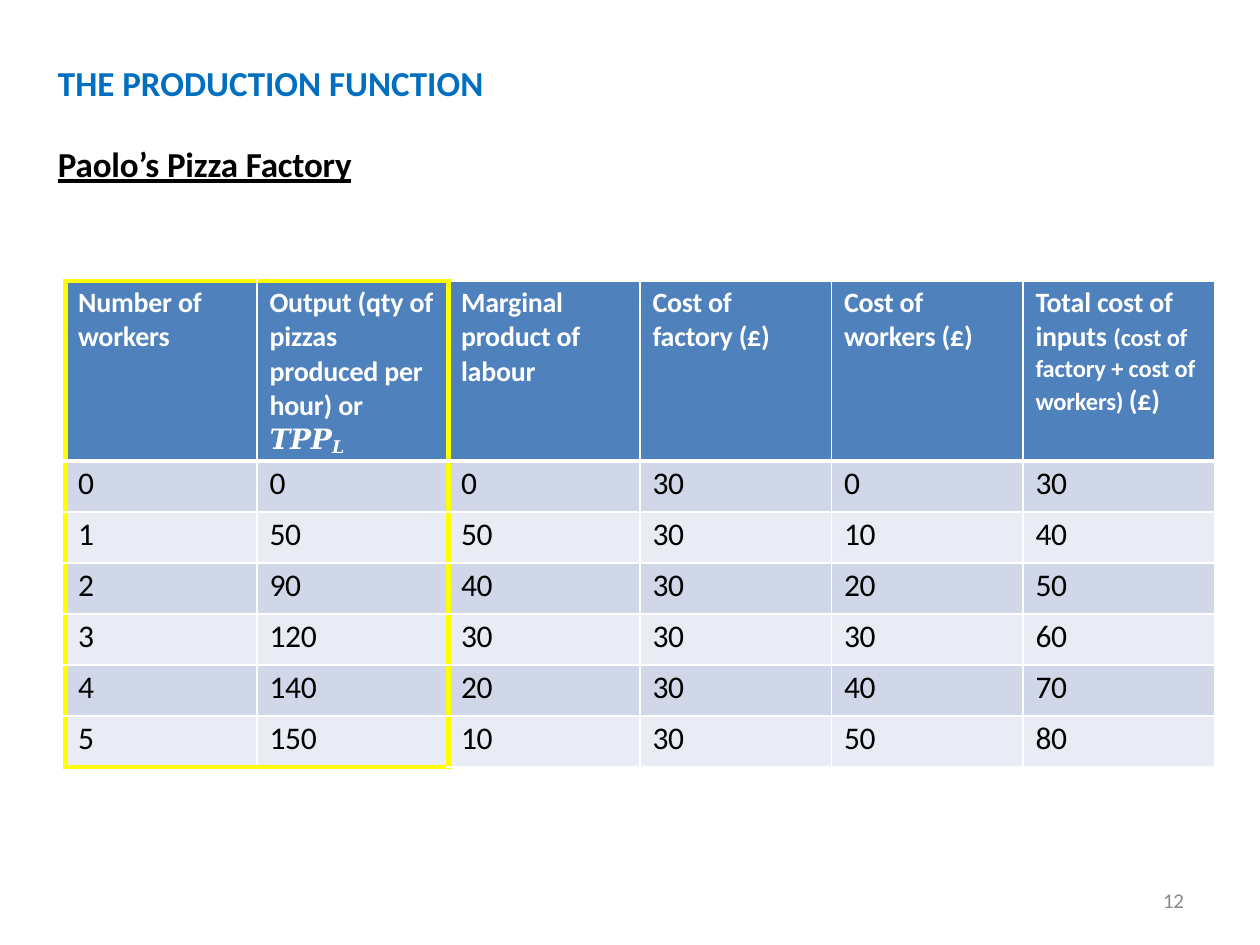
from lxml.etree import SubElement
from pptx import Presentation
from pptx.dml.color import RGBColor
from pptx.enum.text import MSO_ANCHOR, MSO_AUTO_SIZE, PP_ALIGN
from pptx.oxml.ns import qn
from pptx.util import Inches, Pt

WHITE, BLACK, YELLOW = "FFFFFF", "000000", "FFFF00"
BLUE, GREY = "006FC0", "888888"
HEADER_FILL, BAND_FILLS = "4F81BC", ("D0D7E8", "E9ECF4")
FRAMED_COLUMNS = 2

# Each heading is a list of paragraphs, each paragraph a list of (text, format)
SMALL = {"size": 14}
MATHS = {"font": "Times New Roman", "bold": False}
HEADINGS = [
    [[("Number of", {})], [("workers", {})]],
    [[("Output (qty of pizzas produced per hour) or", {})],
     [("𝑻𝑷𝑷", MATHS), ("𝑳", {**MATHS, "size": 17.2, "baseline": -14})]],
    [[("Marginal product of labour", {})]],
    [[("Cost of", {})], [("factory (£)", {})]],
    [[("Cost of", {})], [("workers (£)", {})]],
    [[("Total cost of inputs ", {}),
      ("(cost of factory + cost of workers) ", SMALL), ("(£)", {})]],
]
ROWS = [
    (0, 0, 0, 30, 0, 30),
    (1, 50, 50, 30, 10, 40),
    (2, 90, 40, 30, 20, 50),
    (3, 120, 30, 30, 30, 60),
    (4, 140, 20, 30, 40, 70),
    (5, 150, 10, 30, 50, 80),
]


def colour(code):
    return RGBColor.from_string(code)


def write(para, text, size=16, color=BLACK, font="Calibri", bold=False,
          underline=False, spacing=-0.1, baseline=0):
    span = para.add_run()
    span.text = text
    span.font.size = Pt(size)
    span.font.name = font
    span.font.bold = bold
    span.font.underline = underline
    span.font.color.rgb = colour(color)
    properties = span.font._element
    properties.set("spc", str(round(spacing * 100)))
    if baseline:
        properties.set("baseline", str(baseline * 1000))


def set_frame(frame, left=0, top=0):
    frame.margin_left, frame.margin_top = Inches(left), Inches(top)
    frame.margin_right = frame.margin_bottom = 0
    frame.vertical_anchor = MSO_ANCHOR.TOP
    frame.word_wrap = True
    frame.auto_size = MSO_AUTO_SIZE.NONE


def set_borders(cell, sides):
    """Draw the sides, given as (colour, points) for left, right, top, bottom."""
    properties = cell._tc.get_or_add_tcPr()
    for index, (tag, (code, points)) in enumerate(zip(("lnL", "lnR", "lnT", "lnB"), sides)):
        line = SubElement(properties, qn(f"a:{tag}"), w=str(Pt(points)))
        fill = SubElement(line, qn("a:solidFill"))
        SubElement(fill, qn("a:srgbClr"), val=code)
        properties.insert(index, line)


def add_title(page, left, top, width, height):
    title = page.shapes.title
    title.left, title.top = Inches(left), Inches(top)
    title.width, title.height = Inches(width), Inches(height)
    frame = title.text_frame
    set_frame(frame, left=0.01, top=0.03)
    heading, subject = frame.paragraphs[0], frame.add_paragraph()
    subject.space_before = Pt(22.1)
    heading.alignment = subject.alignment = PP_ALIGN.LEFT
    write(heading, "THE PRODUCTION FUNCTION", size=20, color=BLUE, bold=True, spacing=0)
    write(subject, "Paolo’s Pizza Factory", size=20, bold=True, underline=True)


def cell_borders(row, column, last_row):
    thin, thick, frame = (WHITE, 1), (WHITE, 3), (YELLOW, 3)
    framed = column < FRAMED_COLUMNS
    left = frame if column in (0, FRAMED_COLUMNS) else thin
    right = frame if column == FRAMED_COLUMNS - 1 else thin
    top = frame if framed and row == 0 else thick if row == 1 else thin
    bottom = frame if framed and row == last_row else thick if row == 0 else thin
    return left, right, top, bottom


def add_output_table(page, left, top, width, header_height, body_height):
    count = len(ROWS)
    table = page.shapes.add_table(
        count + 1, len(HEADINGS), Inches(left), Inches(top),
        Inches(width), Inches(header_height + body_height)).table
    table.first_row = table.horz_banding = False
    for column in table.columns:
        column.width = Inches(width / len(HEADINGS))
    for index, row in enumerate(table.rows):
        row.height = Inches(body_height / count if index else header_height)

    # Fills, margins and borders
    for row in range(count + 1):
        for column in range(len(HEADINGS)):
            cell = table.cell(row, column)
            cell.margin_left, cell.margin_top = Inches(0.1), Inches(0.03 if row else 0.04)
            cell.margin_right = cell.margin_bottom = 0
            cell.fill.solid()
            cell.fill.fore_color.rgb = colour(BAND_FILLS[(row - 1) % 2] if row else HEADER_FILL)
            set_borders(cell, cell_borders(row, column, count))

    # Headings
    for column, paragraphs in enumerate(HEADINGS):
        frame = table.cell(0, column).text_frame
        for index, spans in enumerate(paragraphs):
            para = frame.add_paragraph() if index else frame.paragraphs[0]
            for text, style in spans:
                write(para, text, **{"color": WHITE, "bold": True, **style})

    # Figures
    for row, values in enumerate(ROWS, 1):
        for column, value in enumerate(values):
            para = table.cell(row, column).text_frame.paragraphs[0]
            write(para, str(value), size=18, spacing=-0.2)


def add_page_number(page, left, top, width, height):
    box = page.shapes.add_textbox(Inches(left), Inches(top), Inches(width), Inches(height))
    set_frame(box.text_frame, left=0.04, top=0.42)
    para = box.text_frame.paragraphs[0]
    para.line_spacing = Pt(12.4)
    write(para, "12", size=12, color=GREY, spacing=-0.2)


def main():
    deck = Presentation()
    deck.slide_width, deck.slide_height = Inches(10), Inches(7.5)
    page = deck.slides.add_slide(deck.slide_layouts[5])
    add_title(page, 0.45, 0.46, 3.4, 1)
    add_output_table(page, 0.52, 2.23, 9.12, header_height=1.43, body_height=2.43)
    add_page_number(page, 9.19, 6.65, 0.32, 0.61)
    deck.save("out.pptx")


if __name__ == "__main__":
    main()
